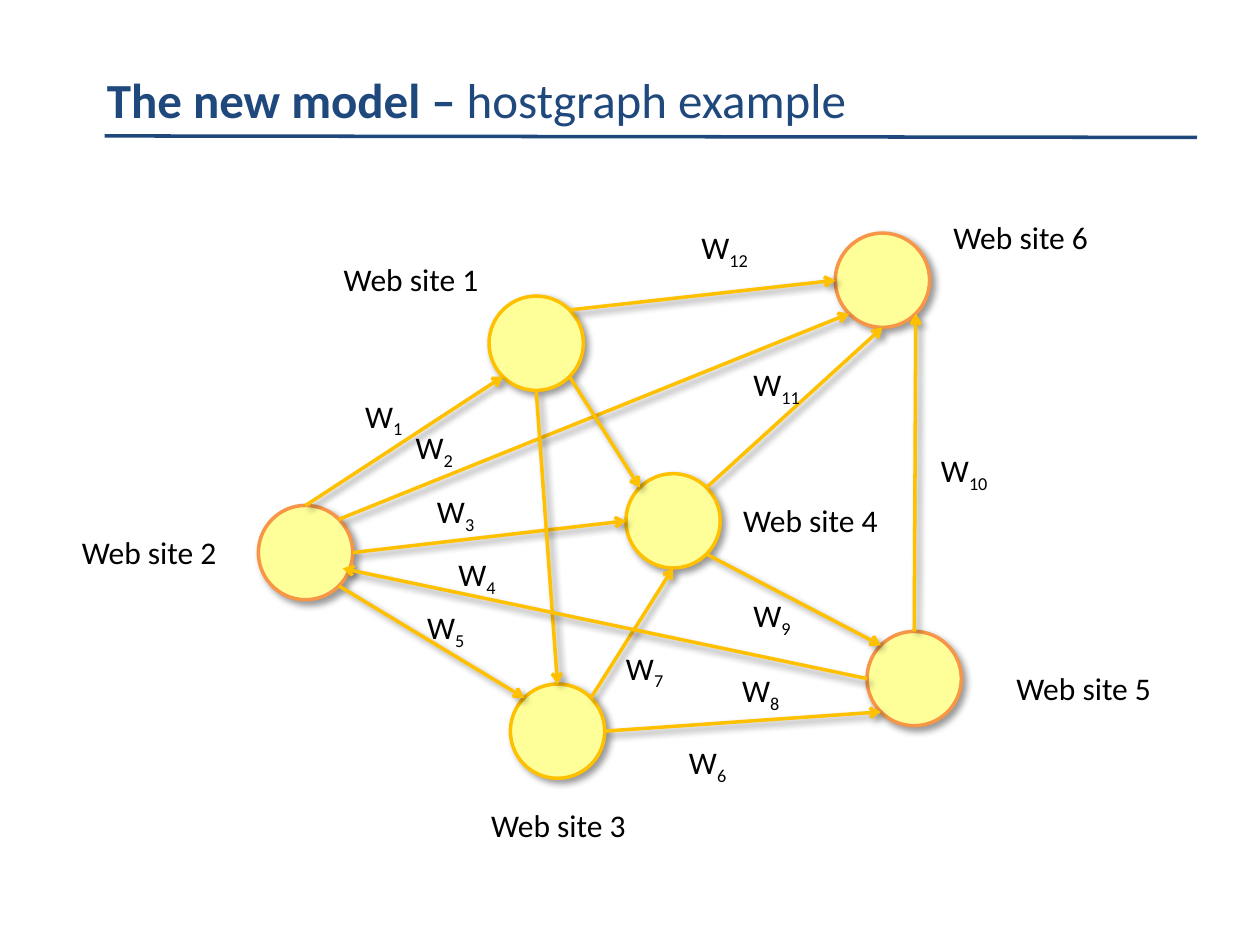
"""Build a slide with a weighted graph of six web sites."""
from math import cos, radians, sin

from lxml.etree import SubElement
from pptx import Presentation
from pptx.dml.color import RGBColor
from pptx.enum.shapes import MSO_CONNECTOR as Link, MSO_SHAPE as Shape
from pptx.enum.text import MSO_ANCHOR as Anchor, PP_ALIGN as Align
from pptx.oxml.ns import qn
from pptx.util import Cm, Pt

FONT, NAVY, GOLD, ORANGE = "Calibri", "1F497D", "FFC000", "F79646"
SIZE = 1.9
TITLE = [("The new model – ", True), ("hostgraph example", False)]
NODES = {
    2: (5.21, 10.19, ORANGE), 1: (9.86, 5.97, GOLD), 3: (10.29, 13.79, GOLD),
    4: (12.62, 9.55, GOLD), 5: (17.48, 12.73, ORANGE), 6: (16.84, 4.7, ORANGE),
}
TOP, TL, LEFT, BL, BOTTOM, BR, RIGHT, TR = range(8)
EDGES = [
    (2, TOP, 1, BL), (2, TR, 6, BL), (3, TR, 4, BOTTOM), (2, RIGHT, 4, LEFT),
    (2, BR, 3, TL), (1, BOTTOM, 3, TOP), (1, BR, 4, TL), (1, TR, 6, LEFT),
    (4, TR, 6, BOTTOM), (3, RIGHT, 5, BL), (4, BR, 5, TL), (5, TOP, 6, BR),
]
BACK = (5, LEFT, (6.91, 11.46))
SITES = {
    1: (6.68, 5.11), 2: (1.4, 10.62), 3: (9.65, 16.13),
    4: (14.73, 9.98), 5: (20.24, 13.36), 6: (18.97, 4.27),
}
WEIGHTS = {
    1: (7.11, 7.87), 2: (8.13, 8.51), 3: (8.56, 9.8), 4: (8.99, 11.07),
    5: (8.36, 12.14), 6: (13.64, 14.86), 7: (12.37, 12.95), 8: (14.71, 13.41),
    9: (14.94, 11.89), 10: (18.72, 8.97), 11: (14.94, 7.24), 12: (13.89, 4.47),
}


def color(code):
    return RGBColor.from_string(code)


def style(run, size, code, bold=False):
    font = run.font
    font.name, font.size, font.bold = FONT, Pt(size), bold
    font.color.rgb = color(code)


def stroke(item, code):
    item.line.color.rgb = color(code)
    item.line.width = Pt(2)


def shade(item, on=True):
    group = SubElement(item._element.spPr, qn("a:effectLst"))
    if on:
        drop = SubElement(group, qn("a:outerShdw"), blurRad=str(Pt(4)),
                          dist=str(Pt(3)), dir="2700000", rotWithShape="0")
        tone = SubElement(drop, qn("a:srgbClr"), val="000000")
        SubElement(tone, qn("a:alpha"), val="40000")


def join(shapes, start, end, code):
    line = shapes.add_connector(Link.STRAIGHT, *map(Cm, start + end))
    stroke(line, code)
    return line


def spot(node, site):
    x, y, _ = NODES[node]
    half, turn = SIZE / 2, radians(45 * site)
    return x + half - half * sin(turn), y + half - half * cos(turn)


def arrow(shapes, start, end):
    line = join(shapes, start, end, GOLD)
    SubElement(line.line._get_or_add_ln(), qn("a:tailEnd"), type="arrow")
    shade(line)
    return line


def glue(line, tag, disc, site):
    SubElement(line._element.nvCxnSpPr.cNvCxnSpPr, qn(tag),
               id=str(disc.shape_id), idx=str(site))


def label(shapes, spot_at, wide, text, sub=""):
    box = shapes.add_textbox(*map(Cm, (*spot_at, wide, 1.02)))
    box.text_frame.word_wrap = False
    para = box.text_frame.paragraphs[0]
    para.text = text
    if sub:
        low = para.add_run()
        low.text = sub
        low._r.get_or_add_rPr().set("baseline", "-25000")
    for run in para.runs:
        style(run, 18, "000000")


def head(shapes):
    title = shapes.title
    title.left, title.top, title.width, title.height = map(
        Cm, (1.9, 1.27, 22.23, 1.45))
    frame = title.text_frame
    frame.vertical_anchor = Anchor.TOP
    para = frame.paragraphs[0]
    para.alignment = Align.LEFT
    for text, bold in TITLE:
        run = para.add_run()
        run.text = text
        style(run, 28, NAVY, bold)
    shade(join(shapes, (2.11, 2.74), (24.13, 2.77), NAVY), False)


def graph(shapes):
    discs = {}
    for key, (x, y, edge) in NODES.items():
        disc = shapes.add_shape(Shape.OVAL, *map(Cm, (x, y, SIZE, SIZE)))
        disc.fill.solid()
        disc.fill.fore_color.rgb = color("FFFF99")
        stroke(disc, edge)
        shade(disc)
        discs[key] = disc
    for src, out, dest, into in EDGES:
        line = arrow(shapes, spot(src, out), spot(dest, into))
        glue(line, "a:stCxn", discs[src], out)
        glue(line, "a:endCxn", discs[dest], into)
    src, out, end = BACK
    glue(arrow(shapes, spot(src, out), end), "a:stCxn", discs[src], out)


def main():
    deck = Presentation()
    deck.slide_width, deck.slide_height = Cm(25.4), Cm(19.05)
    shapes = deck.slides.add_slide(deck.slide_layouts[5]).shapes
    head(shapes)
    graph(shapes)
    for key, place in SITES.items():
        label(shapes, place, 3.25, f"Web site {key}")
    for key, place in WEIGHTS.items():
        label(shapes, place, 1.3 if key < 10 else 1.52, "W", str(key))
    deck.save("out.pptx")


if __name__ == "__main__":
    main()
